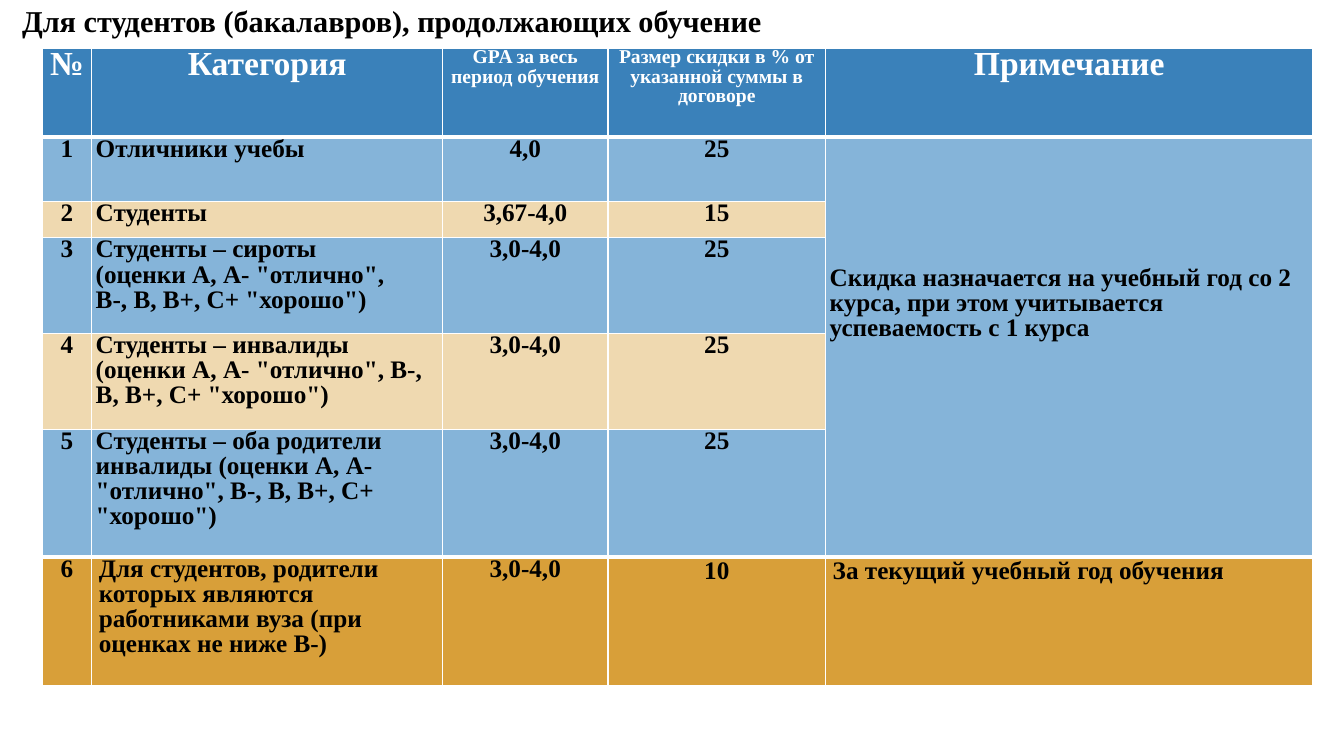
from dataclasses import dataclass

from lxml import etree
from pptx import Presentation
from pptx import util as u
from pptx.dml.color import RGBColor
from pptx.enum import text
from pptx.oxml import ns

PX = 9144  # EMU, 100 px to the inch
FONT = "Times New Roman"
BLACK = RGBColor(0x00, 0x00, 0x00)
WHITE = RGBColor(0xFF, 0xFF, 0xFF)
HEADER_BLUE = RGBColor(0x3A, 0x81, 0xBA)
LIGHT_BLUE = RGBColor(0x85, 0xB4, 0xD9)
SAND = RGBColor(0xEF, 0xD9, 0xB0)
OCHRE = RGBColor(0xD8, 0x9F, 0x39)

COLUMN_WIDTHS = (49, 348, 164, 216, 483)
CENTERED_COLUMNS = (0, 2, 3)
NOTE_COLUMN = 4
HEAVY_EDGES = (1, 6)  # row boundaries with a thick rule
NOTE_TOP = 128


@dataclass(frozen=True)
class Row:
    height: int
    fill: RGBColor
    cells: tuple[str, ...]


ROWS = (
    Row(88, HEADER_BLUE, (
        "№", "Категория", "GPA за весь период обучения",
        "Размер скидки в % от указанной суммы в договоре", "Примечание")),
    Row(64, LIGHT_BLUE, (
        "1", "Отличники учебы", "4,0", "25",
        "Скидка назначается на учебный год со 2 курса, "
        "при этом учитывается успеваемость с 1 курса")),
    Row(36, SAND, ("2", "Студенты", "3,67-4,0", "15", "")),
    Row(95, LIGHT_BLUE, (
        "3", "Студенты – сироты\n(оценки А, А- \"отлично\",\nВ-, В, В+, С+ \"хорошо\")",
        "3,0-4,0", "25", "")),
    Row(95, SAND, (
        "4", "Студенты – инвалиды (оценки А, А- \"отлично\", В-, В, В+, С+ \"хорошо\")",
        "3,0-4,0", "25", "")),
    Row(127, LIGHT_BLUE, (
        "5", "Студенты – оба родители инвалиды "
        "(оценки А, А- \"отлично\", В-, В, В+, С+ \"хорошо\")",
        "3,0-4,0", "25", "")),
    Row(127, OCHRE, (
        "6", "Для студентов, родители которых являются работниками вуза "
        "(при оценках не ниже В-)",
        "3,0-4,0", "10", "За текущий учебный год обучения")),
)
LAST_ROW = len(ROWS) - 1


def px(length: int) -> u.Emu:
    return u.Emu(length * PX)


def write_text(frame, content: str, *, size: float, color: RGBColor = BLACK,
               centered: bool = False, spacing: float = 1.0) -> None:
    """Fill a text frame with bold text, one paragraph per line of content."""
    frame.word_wrap = True
    frame.text = content
    for paragraph in frame.paragraphs:
        paragraph.alignment = text.PP_ALIGN.CENTER if centered else text.PP_ALIGN.LEFT
        paragraph.line_spacing = spacing
        for run in paragraph.runs:
            run.font.name = FONT
            run.font.size = u.Pt(size)
            run.font.bold = True
            run.font.color.rgb = color


def set_borders(cell, top_edge: int, bottom_edge: int) -> None:
    """Draw white borders, thick along the heavy row boundaries."""
    widths = {
        "lnL": 1,
        "lnR": 1,
        "lnT": 3 if top_edge in HEAVY_EDGES else 1,
        "lnB": 3 if bottom_edge in HEAVY_EDGES else 1,
    }
    properties = cell._tc.get_or_add_tcPr()
    for tag, width in widths.items():
        line = etree.SubElement(properties, ns.qn(f"a:{tag}"), w=str(u.Pt(width)))
        fill = etree.SubElement(line, ns.qn("a:solidFill"))
        etree.SubElement(fill, ns.qn("a:srgbClr"), val=str(WHITE))


def format_cell(cell, row_index: int, column_index: int) -> None:
    row = ROWS[row_index]
    is_header = row_index == 0
    is_last = row_index == LAST_ROW
    is_label = is_header and column_index in (2, 3)

    set_borders(cell, row_index, row_index + cell.span_height)
    cell.fill.solid()
    cell.fill.fore_color.rgb = row.fill
    cell.margin_left = cell.margin_right = px(7 if is_last and column_index else 4)
    cell.margin_top = px(NOTE_TOP if cell.is_merge_origin else 0)
    cell.margin_bottom = 0
    if row.cells[column_index]:
        write_text(
            cell.text_frame, row.cells[column_index],
            size=24 if is_header and not is_label else 14 if is_header else 18,
            color=WHITE if is_header else BLACK,
            centered=is_header or column_index in CENTERED_COLUMNS,
            spacing=1.0 if is_last and column_index >= 3 else 0.9)


def add_title(slide) -> None:
    title = slide.shapes.add_textbox(px(12), 0, px(1301), px(40))
    frame = title.text_frame
    frame.margin_left = frame.margin_right = px(10)
    frame.margin_top = frame.margin_bottom = 0
    frame.vertical_anchor = text.MSO_ANCHOR.MIDDLE
    write_text(frame, "Для студентов (бакалавров), продолжающих обучение", size=21.6)


def add_discount_table(slide) -> None:
    table = slide.shapes.add_table(
        len(ROWS), len(COLUMN_WIDTHS), px(42), px(48),
        px(sum(COLUMN_WIDTHS)), px(sum(row.height for row in ROWS))).table
    table.horz_banding = False
    for column, width in zip(table.columns, COLUMN_WIDTHS):
        column.width = px(width)
    table.cell(1, NOTE_COLUMN).merge(table.cell(LAST_ROW - 1, NOTE_COLUMN))
    for row_index, row in enumerate(ROWS):
        table.rows[row_index].height = px(row.height)
        for column_index in range(len(COLUMN_WIDTHS)):
            format_cell(table.cell(row_index, column_index), row_index, column_index)


def main() -> None:
    presentation = Presentation()
    presentation.slide_width = px(1333)
    presentation.slide_height = px(750)
    slide = presentation.slides.add_slide(presentation.slide_layouts[6])
    add_title(slide)
    add_discount_table(slide)
    presentation.save("out.pptx")


if __name__ == "__main__":
    main()
